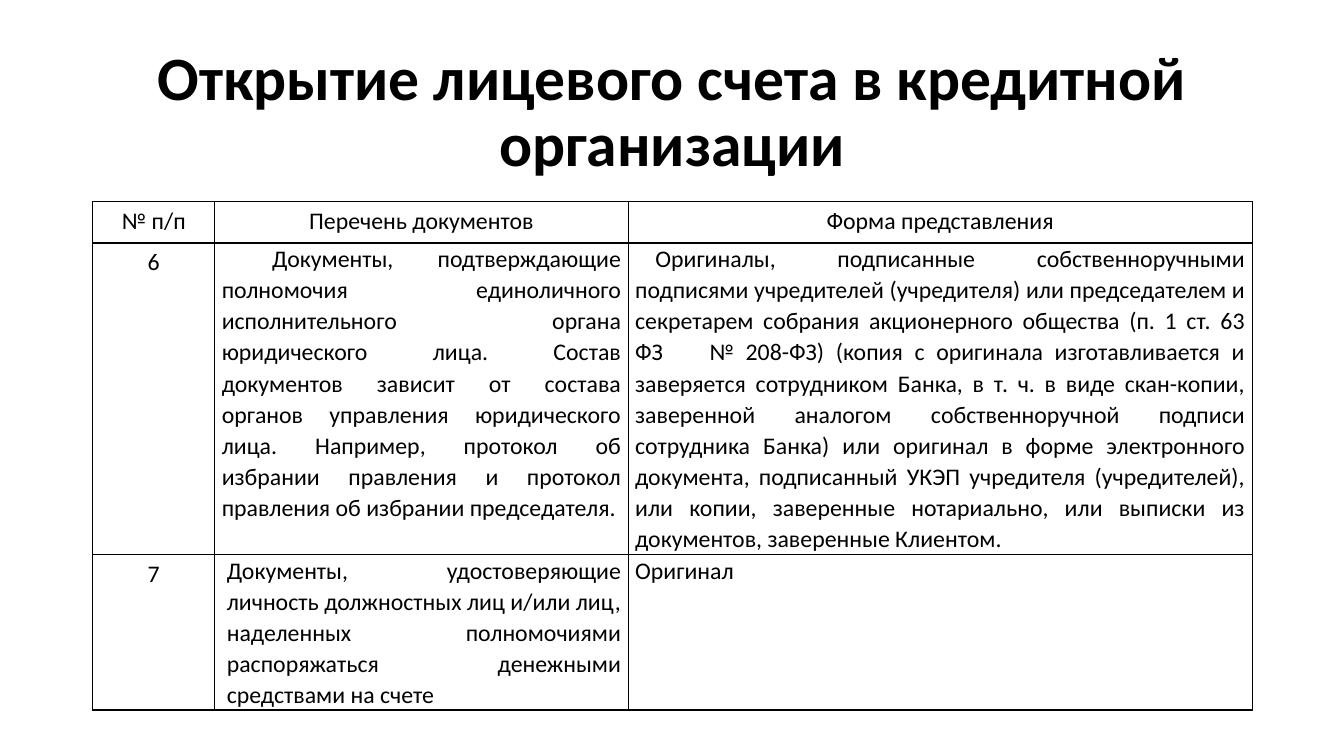
from dataclasses import dataclass

from lxml.etree import SubElement
from pptx import Presentation
from pptx.dml.color import RGBColor
from pptx.enum.text import MSO_ANCHOR, PP_ALIGN
from pptx.oxml.ns import qn
from pptx.util import Pt

TITLE = "Открытие лицевого счета в кредитной организации"
HEADERS = ("№ п/п", "Перечень документов", "Форма представления")
DOCUMENTS = [
    (
        "6",
        ("Документы, подтверждающие полномочия единоличного исполнительного органа "
         "юридического лица. Состав документов зависит от состава органов управления "
         "юридического лица. Например, протокол об избрании правления и протокол "
         "правления об избрании председателя."),
        ("Оригиналы, подписанные собственноручными подписями учредителей (учредителя) "
         "или председателем и секретарем собрания акционерного общества (п. 1 ст. 63 "
         "ФЗ    № 208-ФЗ) (копия с оригинала изготавливается и заверяется сотрудником "
         "Банка, в т. ч. в виде скан-копии, заверенной аналогом собственноручной подписи "
         "сотрудника Банка) или оригинал в форме электронного документа, подписанный УКЭП "
         "учредителя (учредителей), или копии, заверенные нотариально, или выписки из "
         "документов, заверенные Клиентом."),
    ),
    (
        "7",
        ("Документы, удостоверяющие личность должностных лиц и/или лиц, наделенных "
         "полномочиями распоряжаться денежными средствами на счете"),
        "Оригинал",
    ),
]
BODY_FORMATS = {
    (1, 1): dict(align=PP_ALIGN.JUSTIFY, indent=50),
    (1, 2): dict(align=PP_ALIGN.JUSTIFY, indent=20),
    (2, 1): dict(align=PP_ALIGN.JUSTIFY, margin=5),
    (2, 2): dict(align=PP_ALIGN.LEFT),
}
COLUMN_WIDTHS = (121, 410, 619)
ROW_HEIGHTS = (41, 309, 154)
LEFT, TITLE_TOP, TITLE_HEIGHT, TABLE_TOP = 92, 40, 145, 200


@dataclass(frozen=True)
class Theme:
    font: str = "Calibri"
    ink: str = "000000"
    paper: str = "FFFFFF"
    title_size: int = 44
    table_size: int = 17
    border: int = 1


THEME = Theme()


def px(n):
    return n * 9144


def write(tf, text, size=THEME.table_size, bold=False, align=PP_ALIGN.CENTER,
          spacing=1.0, margin=0, indent=0):
    tf.word_wrap = True
    p = tf.paragraphs[0]
    p.alignment = align
    p.line_spacing = spacing
    pPr = p._p.get_or_add_pPr()
    pPr.set("marL", str(px(margin)))
    pPr.set("indent", str(px(indent)))
    r = p.add_run()
    r.text = text
    r.font.name = THEME.font
    r.font.size = Pt(size)
    r.font.bold = bold
    r.font.color.rgb = RGBColor.from_string(THEME.ink)


def add_borders(cell):
    tcPr = cell._tc.get_or_add_tcPr()
    for i, side in enumerate(("a:lnL", "a:lnR", "a:lnT", "a:lnB")):
        ln = SubElement(tcPr, qn(side), w=str(Pt(THEME.border)))
        fill = SubElement(ln, qn("a:solidFill"))
        SubElement(fill, qn("a:srgbClr"), val=THEME.ink)
        tcPr.insert(i, ln)


def add_title(s):
    sp = s.shapes.title
    sp.left, sp.top = px(LEFT), px(TITLE_TOP)
    sp.width, sp.height = px(sum(COLUMN_WIDTHS)), px(TITLE_HEIGHT)
    sp.text_frame.vertical_anchor = MSO_ANCHOR.MIDDLE
    write(sp.text_frame, TITLE, size=THEME.title_size, bold=True, spacing=0.9)


def add_documents(s):
    rows = [HEADERS, *DOCUMENTS]
    table = s.shapes.add_table(
        len(rows), len(HEADERS), px(LEFT), px(TABLE_TOP),
        px(sum(COLUMN_WIDTHS)), px(sum(ROW_HEIGHTS))).table
    table.first_row = table.horz_banding = False
    for column, width in zip(table.columns, COLUMN_WIDTHS):
        column.width = px(width)
    for row, height in zip(table.rows, ROW_HEIGHTS):
        row.height = px(height)
    for i, texts in enumerate(rows):
        for j, text in enumerate(texts):
            cell = table.cell(i, j)
            cell.fill.solid()
            cell.fill.fore_color.rgb = RGBColor.from_string(THEME.paper)
            add_borders(cell)
            fmt = BODY_FORMATS.get((i, j), {})
            if fmt:
                cell.margin_left = cell.margin_right = px(7)
                cell.margin_top = cell.margin_bottom = 0
                fmt = dict(fmt, spacing=1.07)
            write(cell.text_frame, text, **fmt)


def main():
    prs = Presentation()
    prs.slide_width, prs.slide_height = px(1333), px(750)
    s = prs.slides.add_slide(prs.slide_layouts[5])
    add_title(s)
    add_documents(s)
    prs.save("out.pptx")


if __name__ == "__main__":
    main()
